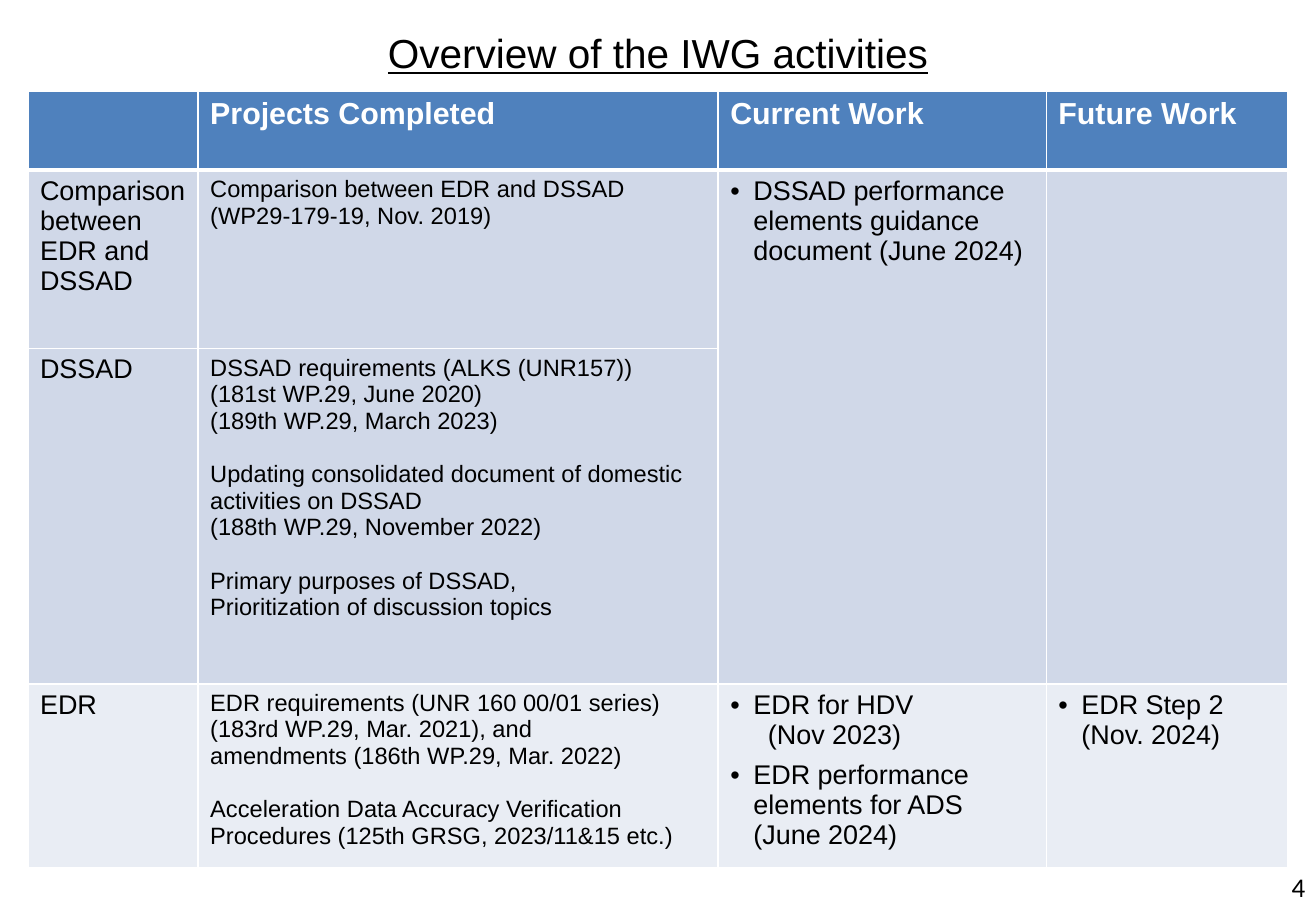
from dataclasses import dataclass

from lxml.etree import SubElement
from pptx import Presentation
from pptx.dml.color import RGBColor
from pptx.enum.text import MSO_ANCHOR, PP_ALIGN
from pptx.oxml.ns import qn
from pptx.util import Inches, Pt

BLACK = RGBColor(0x00, 0x00, 0x00)
WHITE = RGBColor(0xFF, 0xFF, 0xFF)
HEADER_BLUE = RGBColor(0x4F, 0x81, 0xBD)
BAND_BLUE = RGBColor(0xD0, 0xD8, 0xE8)
BAND_PALE = RGBColor(0xE9, 0xED, 0xF4)

COLUMN_WIDTHS = [1.4, 4.28, 2.7, 1.99]
ROW_HEIGHTS = [0.65, 1.47, 2.76, 1.41]
ROW_FILLS = [HEADER_BLUE, BAND_BLUE, BAND_BLUE, BAND_PALE]
COLUMN_SIZES = [16, 14, 16, 16]
HEADER_SIZE = 18
BULLET_INDENT = 0.19


@dataclass
class Line:
    text: str
    gap: int = 0
    bullet: bool = False
    indent: float = 0


ROWS = [
    [
        [],
        [Line("Projects Completed")],
        [Line("Current Work")],
        [Line("Future Work")],
    ],
    [
        [Line("Comparison between EDR and DSSAD")],
        [
            Line("Comparison between EDR and DSSAD"),
            Line("(WP29-179-19, Nov. 2019)"),
        ],
        [Line("DSSAD performance elements guidance document (June 2024)", bullet=True)],
        [],
    ],
    [
        [Line("DSSAD")],
        [
            Line("DSSAD requirements (ALKS (UNR157))\n(181st WP.29, June 2020)"),
            Line("(189th WP.29, March 2023)"),
            Line("Updating consolidated document of domestic activities on DSSAD", gap=16),
            Line("(188th WP.29, November 2022)"),
            Line("Primary purposes of DSSAD,", gap=16),
            Line("Prioritization of discussion topics"),
        ],
        [],
        [],
    ],
    [
        [Line("EDR")],
        [
            Line("EDR requirements (UNR 160 00/01 series) (183rd WP.29, Mar. 2021), and\n"
                 "amendments (186th WP.29, Mar. 2022)"),
            Line("Acceleration Data Accuracy Verification Procedures "
                 "(125th GRSG, 2023/11&15 etc.)", gap=16),
        ],
        [
            Line("EDR for HDV", bullet=True),
            Line("(Nov 2023)", indent=0.31),
            Line("EDR performance elements for ADS (June 2024)", gap=6, bullet=True),
        ],
        [Line("EDR Step 2\n(Nov. 2024)", bullet=True)],
    ],
]


def add_span(para, text, size, color=BLACK, bold=False, name="Arial"):
    span = para.add_run()
    span.text = text
    span.font.name = name
    span.font.size = Pt(size)
    span.font.bold = bold
    span.font.color.rgb = color
    return span


def add_text_box(page, box, align):
    frame = page.shapes.add_textbox(*map(Inches, box)).text_frame
    frame.word_wrap = True
    frame.vertical_anchor = MSO_ANCHOR.MIDDLE
    para = frame.paragraphs[0]
    para.alignment = align
    return frame, para


def add_title(page, box):
    frame, para = add_text_box(page, box, PP_ALIGN.CENTER)
    frame.margin_left = frame.margin_right = 0
    frame.margin_top = frame.margin_bottom = 0
    add_span(para, "Overview of the IWG activities", 24).font.underline = True


def add_page_number(page, box):
    para = add_text_box(page, box, PP_ALIGN.RIGHT)[1]
    add_span(para, "4", 16, name="Calibri")


def set_indent(para, line):
    properties = para._p.get_or_add_pPr()
    left = BULLET_INDENT if line.bullet else line.indent
    properties.set("marL", str(Inches(left)))
    properties.set("indent", str(-Inches(left) if line.bullet else 0))
    if line.bullet:
        SubElement(properties, qn("a:buFont"), typeface="Arial")
        SubElement(properties, qn("a:buChar"), char="•")


def write_cell(cell, lines, size, color, bold):
    frame = cell.text_frame
    for index, line in enumerate(lines):
        para = frame.add_paragraph() if index else frame.paragraphs[0]
        para.space_before = Pt(line.gap)
        set_indent(para, line)
        for part_index, part in enumerate(line.text.split("\n")):
            if part_index:
                para.add_line_break()
            add_span(para, part, size, color, bold)


def set_borders(cell, top, bottom):
    properties = cell._tc.get_or_add_tcPr()
    for side, width in (("L", 1), ("R", 1), ("T", top), ("B", bottom)):
        border = SubElement(properties, qn(f"a:ln{side}"), w=str(Pt(width)))
        fill = SubElement(border, qn("a:solidFill"))
        SubElement(fill, qn("a:srgbClr"), val=str(WHITE))


def add_activity_table(page, box):
    table = page.shapes.add_table(
        len(ROW_HEIGHTS), len(COLUMN_WIDTHS), *map(Inches, box)).table
    table.horz_banding = False
    for column, width in zip(table.columns, COLUMN_WIDTHS):
        column.width = Inches(width)
    for row_index, cells in enumerate(ROWS):
        table.rows[row_index].height = Inches(ROW_HEIGHTS[row_index])
        header = row_index == 0
        for column_index, lines in enumerate(cells):
            cell = table.cell(row_index, column_index)
            set_borders(cell, 3 if row_index == 1 else 1, 3 if header else 1)
            cell.fill.solid()
            cell.fill.fore_color.rgb = ROW_FILLS[row_index]
            size = HEADER_SIZE if header else COLUMN_SIZES[column_index]
            write_cell(cell, lines, size, WHITE if header else BLACK, header)
    for column_index in (2, 3):
        table.cell(1, column_index).merge(table.cell(2, column_index))


def main():
    deck = Presentation()
    deck.slide_width = Inches(10.83)
    deck.slide_height = Inches(7.5)
    page = deck.slides.add_slide(deck.slide_layouts[6])
    add_title(page, (0.54, 0.2, 9.75, 0.46))
    add_page_number(page, (8.31, 7.1, 2.53, 0.4))
    add_activity_table(page, (0.23, 0.75, sum(COLUMN_WIDTHS), sum(ROW_HEIGHTS)))
    deck.save("out.pptx")


if __name__ == "__main__":
    main()
